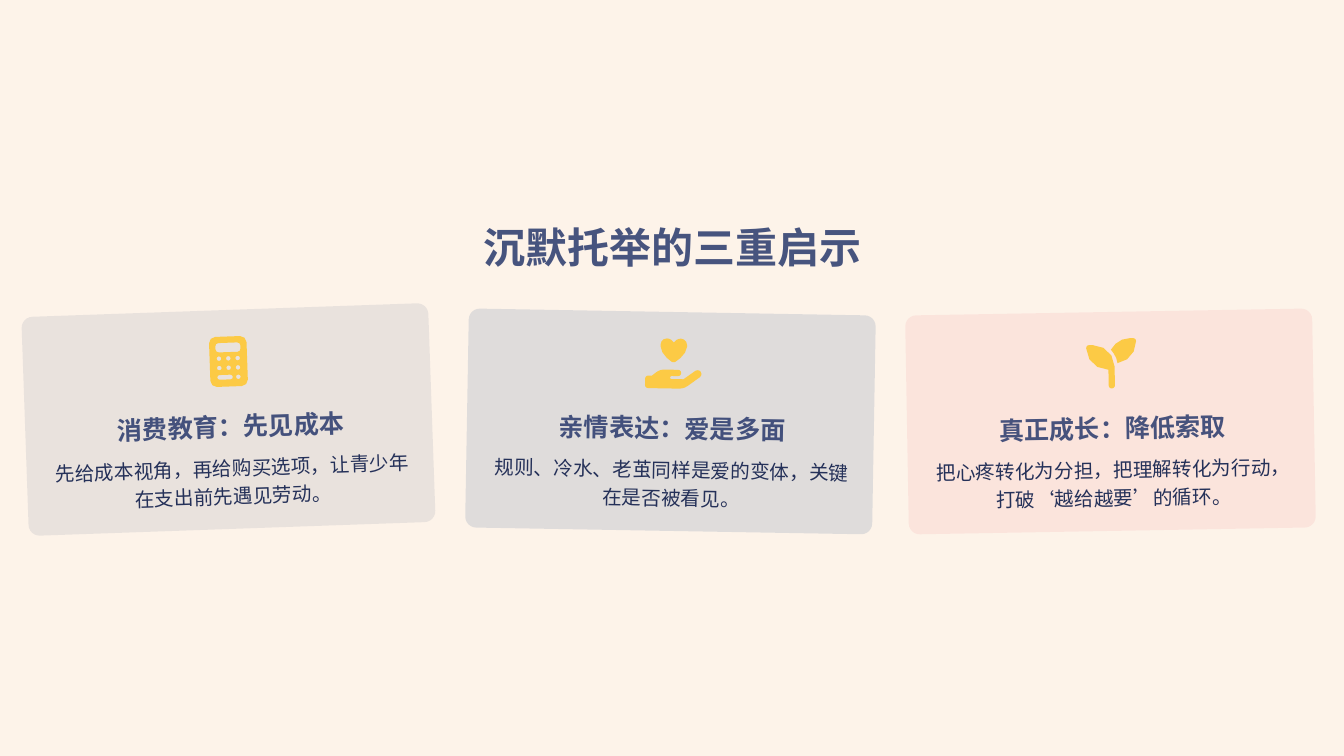
"""Build the slide of three tilted insight cards."""
import math
from dataclasses import dataclass

from lxml import etree
from pptx import Presentation
from pptx import util as u
from pptx.dml.color import RGBColor
from pptx.enum import shapes, text
from pptx.oxml.ns import qn

SLIDE_W, SLIDE_H = 1344, 756
EMU_PER_PX = 12192000 / SLIDE_W
CARD_W, CARD_H, CARD_RADIUS = 407, 219, 11
ICON_H, ICON_GRID = 50, 512
CONTENT_DX = 2
CURVE_STEPS = 3
CORNER_STEPS = 2

Contour = list[tuple[float, float]]


@dataclass(frozen=True)
class Paint:
    rgb: str
    opacity: int = 100


@dataclass(frozen=True)
class TextStyle:
    size: int
    paint: Paint
    bold: bool = False
    spacing: float = 1.0


@dataclass(frozen=True)
class Theme:
    font: str = "Noto Sans CJK SC"
    background: Paint = Paint("FDF3E9")
    icon: Paint = Paint("FCCA45")
    title: TextStyle = TextStyle(30, Paint("2A3A6D", 85), True)
    heading: TextStyle = TextStyle(18, Paint("2A3A6D", 85), True, 1.3)
    body: TextStyle = TextStyle(14, Paint("253159"), False, 1.2)


@dataclass(frozen=True)
class Icon:
    width: int
    contours: list[Contour]


@dataclass(frozen=True)
class Box:
    x: float
    y: float
    w: float
    h: float
    angle: float = 0


@dataclass(frozen=True)
class Card:
    x: int
    y: int
    angle: int
    paint: Paint
    icon: Icon
    heading: str
    body: str

    def inner(self, dy: int, w: float, h: float) -> Box:
        """Return a box centred at a vertical offset along the tilted card axis."""
        turn = math.radians(self.angle)
        cx = self.x + CARD_W / 2 + CONTENT_DX - dy * math.sin(turn)
        cy = self.y + CARD_H / 2 + dy * math.cos(turn)
        return Box(cx - w / 2, cy - h / 2, w, h, self.angle)


THEME = Theme()


def px(value: float) -> u.Emu:
    """Turn px into EMU."""
    return u.Emu(round(value * EMU_PER_PX))


def rounded(x: int, y: int, w: int, h: int, r: int) -> Contour:
    """Trace a rounded rectangle clockwise, merging corners that touch."""
    corners = [(x + w - r, y + r), (x + w - r, y + h - r), (x + r, y + h - r), (x + r, y + r)]
    points = [(round(cx + r * math.cos(a)), round(cy + r * math.sin(a)))
              for i, (cx, cy) in enumerate(corners)
              for a in (math.pi / 2 * (i - 1 + step / CORNER_STEPS)
                        for step in range(CORNER_STEPS + 1))]
    return list(dict.fromkeys(points))


def trace(start: tuple[float, float], *steps: tuple[float, ...]) -> Contour:
    """Flatten lines (two numbers) and cubic curves (six numbers) into points."""
    points = [start]
    for step in steps:
        if len(step) == 2:
            points.append(step)
            continue
        x0, y0 = points[-1]
        x1, y1, x2, y2, x3, y3 = step
        for t in (i / CURVE_STEPS for i in range(1, CURVE_STEPS + 1)):
            a, b, c, d = (1 - t) ** 3, 3 * t * (1 - t) ** 2, 3 * t * t * (1 - t), t ** 3
            points.append((a * x0 + b * x1 + c * x2 + d * x3, a * y0 + b * y1 + c * y2 + d * y3))
    return points


KEYS = [(x, y) for y in (200, 296) for x in (72, 168, 264)] + [(264, 392)]
CALCULATOR = Icon(384, [
    rounded(0, 0, 384, 512, 64),
    rounded(64, 64, 256, 96, 32),
    rounded(72, 392, 160, 48, 24),
    *(rounded(x, y, 48, 48, 24) for x, y in KEYS),
])
HEART_IN_HAND = Icon(576, [
    trace((288, 42), (278, 30), (263, 11, 240, 0, 216, 0), (181, 0, 152, 29, 152, 66),
          (152, 80), (152, 143, 224, 210, 268, 238), (280, 245, 296, 245, 308, 238),
          (352, 210, 424, 143, 424, 80), (424, 66), (424, 29, 395, 0, 360, 0),
          (336, 0, 313, 11, 298, 30)),
    trace((114, 348), (69, 384), (32, 384), (14, 384, 0, 398, 0, 416), (0, 480),
          (0, 498, 14, 512, 32, 512), (352, 512), (381, 512, 410, 503, 433, 486),
          (560, 392), (578, 379, 581, 354, 568, 336), (555, 319, 530, 315, 512, 328),
          (393, 416), (272, 416), (263, 416, 256, 409, 256, 400),
          (256, 391, 263, 384, 272, 384), (336, 384), (354, 384, 368, 370, 368, 352),
          (368, 334, 354, 320, 336, 320), (194, 320), (165, 320, 136, 330, 114, 348)),
])
SEEDLING = Icon(512, [
    trace((512, 32), (512, 146, 427, 240, 318, 254), (311, 201, 287, 152, 253, 115),
          (291, 46, 364, 0, 448, 0), (480, 0), (498, 0, 512, 14, 512, 32)),
    trace((0, 96), (0, 78, 14, 64, 32, 64), (64, 64), (188, 64, 288, 164, 288, 288),
          (288, 480), (288, 498, 274, 512, 256, 512), (238, 512, 224, 498, 224, 480),
          (224, 320), (100, 320, 0, 220, 0, 96)),
])

CARDS = [
    Card(25, 310, -2, Paint("2A3A6D", 9), CALCULATOR, "消费教育：先见成本",
         "先给成本视角，再给购买选项，让青少年在支出前先遇见劳动。"),
    Card(467, 312, 1, Paint("6981A4", 20), HEART_IN_HAND, "亲情表达：爱是多面",
         "规则、冷水、老茧同样是爱的变体，关键在是否被看见。"),
    Card(907, 312, -1, Paint("EE6172", 10), SEEDLING, "真正成长：降低索取",
         "把心疼转化为分担，把理解转化为行动，打破‘越给越要’的循环。"),
]


def apply_paint(fill, paint: Paint) -> None:
    """Set a solid fill with its opacity."""
    fill.solid()
    fill.fore_color.rgb = RGBColor.from_string(paint.rgb)
    if paint.opacity < 100:
        colour = fill._xPr.find(f".//{qn('a:srgbClr')}")
        etree.SubElement(colour, qn("a:alpha"), val=str(paint.opacity * 1000))


def finish(sp, paint: Paint, angle: float = 0) -> None:
    """Give a shape a flat fill, no outline and its tilt."""
    sp.shadow.inherit = False
    apply_paint(sp.fill, paint)
    sp.line.fill.background()
    sp.rotation = angle


def add_panel(slide, kind: shapes.MSO_SHAPE, box: Box, paint: Paint):
    """Draw a preset shape."""
    sp = slide.shapes.add_shape(kind, px(box.x), px(box.y), px(box.w), px(box.h))
    finish(sp, paint, box.angle)
    return sp


def add_label(slide, box: Box, wording: str, style: TextStyle) -> None:
    """Draw a centred text box."""
    sp = slide.shapes.add_textbox(px(box.x), px(box.y), px(box.w), px(box.h))
    sp.rotation = box.angle
    tf = sp.text_frame
    tf.word_wrap = True
    tf.vertical_anchor = text.MSO_ANCHOR.MIDDLE
    tf.margin_left = tf.margin_right = tf.margin_top = tf.margin_bottom = 0
    p = tf.paragraphs[0]
    p.text, p.alignment, p.line_spacing = wording, text.PP_ALIGN.CENTER, style.spacing
    p.font.size, p.font.bold, p.font.name = u.Pt(style.size), style.bold, THEME.font
    apply_paint(p.font.fill, style.paint)
    etree.SubElement(p.font._rPr, qn("a:ea"), typeface=THEME.font)


def add_icon(slide, box: Box, icon: Icon) -> None:
    """Draw an icon as one outline with its contours."""
    first, *others = icon.contours
    builder = slide.shapes.build_freeform(*first[0], scale=px(ICON_H) / ICON_GRID)
    builder.add_line_segments(first[1:])
    for contour in others:
        builder.move_to(*contour[0])
        builder.add_line_segments(contour[1:])
    finish(builder.convert_to_shape(px(box.x), px(box.y)), THEME.icon, box.angle)


def add_card(slide, card: Card) -> None:
    """Draw a tilted card with icon, heading and body."""
    box = Box(card.x, card.y, CARD_W, CARD_H, card.angle)
    sp = add_panel(slide, shapes.MSO_SHAPE.ROUNDED_RECTANGLE, box, card.paint)
    sp.adjustments[0] = CARD_RADIUS / CARD_H
    add_icon(slide, card.inner(-58, card.icon.width * ICON_H / ICON_GRID, ICON_H), card.icon)
    add_label(slide, card.inner(2, 240, 39), card.heading, THEME.heading)
    add_label(slide, card.inner(60, 372, 56), card.body, THEME.body)


def main() -> None:
    """Build and save the slide."""
    prs = Presentation()
    prs.slide_width, prs.slide_height = px(SLIDE_W), px(SLIDE_H)
    slide = prs.slides.add_slide(prs.slide_layouts[6])
    add_panel(slide, shapes.MSO_SHAPE.RECTANGLE, Box(0, -13, SLIDE_W, 778), THEME.background)
    add_label(slide, Box(18, 222, 1309, 50), "沉默托举的三重启示", THEME.title)
    for card in CARDS:
        add_card(slide, card)
    prs.save("out.pptx")


if __name__ == "__main__":
    main()
